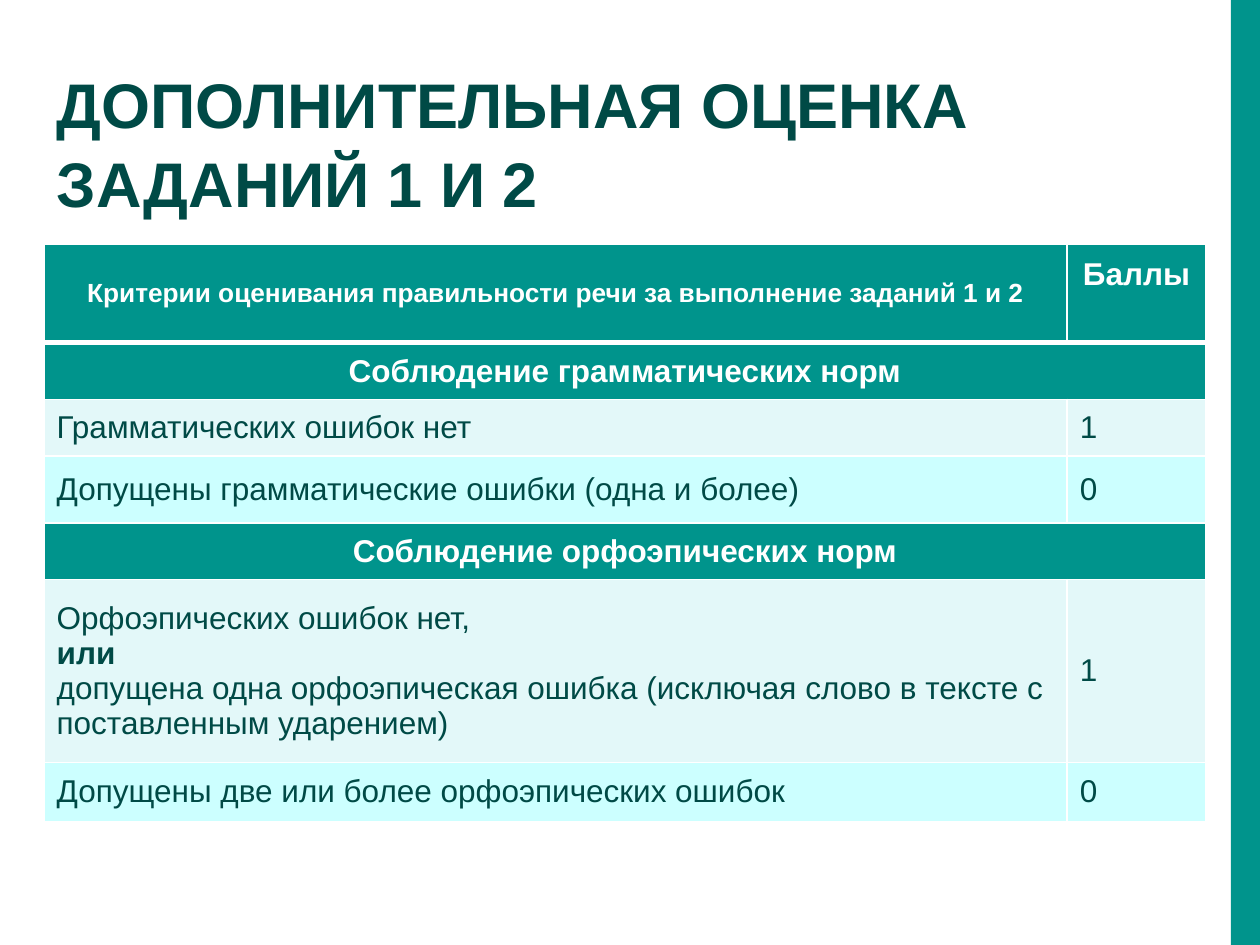
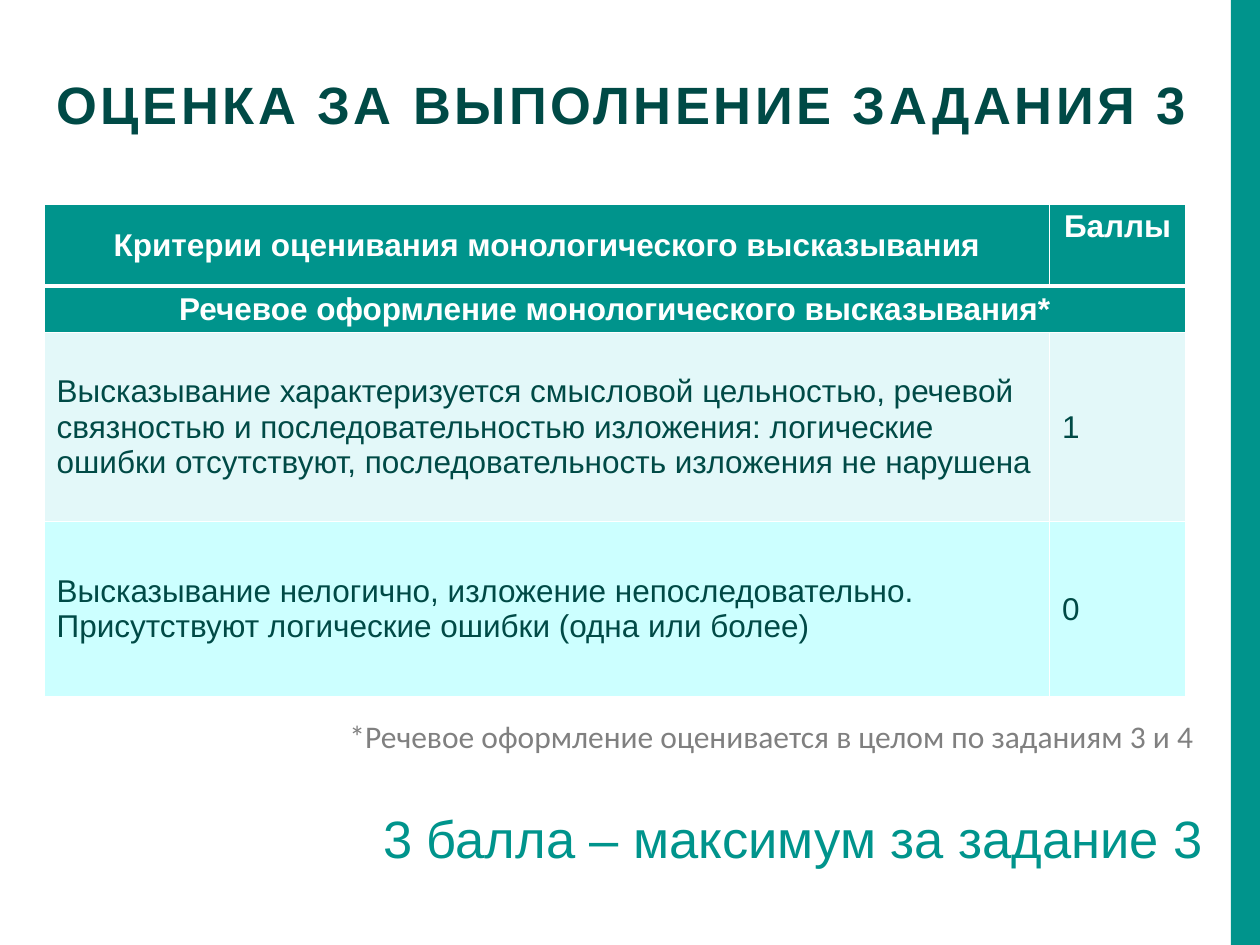
from dataclasses import dataclass

from lxml.etree import SubElement
from pptx import Presentation
from pptx.dml.color import RGBColor
from pptx.enum.shapes import MSO_SHAPE
from pptx.enum.text import MSO_ANCHOR, MSO_AUTO_SIZE, PP_ALIGN
from pptx.oxml import parse_xml
from pptx.oxml.ns import nsdecls, qn
from pptx.slide import Slide, SlideLayout
from pptx.table import Table, _Cell
from pptx.text.text import TextFrame
from pptx.util import Inches, Length, Pt


@dataclass(frozen=True)
class Theme:
    teal: str = "00948C"
    ink: str = "004A46"
    pale: str = "E3F8F9"
    aqua: str = "CCFFFF"
    white: str = "FFFFFF"
    gray: str = "808080"
    sans: str = "Arial"
    note: str = "Calibri"
    body: float = 18
    small: float = 15
    large: float = 30
    huge: float = 36
    line: float = 1
    rule: float = 3


@dataclass(frozen=True)
class Box:
    col: float
    row: float
    wide: float
    high: float

    def place(self) -> tuple[Length, Length, Length, Length]:
        return unit(self.col), unit(self.row), unit(self.wide), unit(self.high)


@dataclass(frozen=True)
class Head:
    text: str
    box: Box
    size: float
    lead: float = 1.0
    gap: float = 0


@dataclass(frozen=True)
class Row:
    text: str
    high: float
    score: str = ""


@dataclass(frozen=True)
class Grid:
    left: float
    top: float
    cols: tuple[float, float]
    rows: tuple[Row, ...]
    size: float = 18


@dataclass(frozen=True)
class Note:
    text: str
    box: Box
    size: float
    color: str
    face: str


@dataclass(frozen=True)
class Page:
    head: Head
    grid: Grid
    notes: tuple[Note, ...] = ()


THEME = Theme()
COLS, ROWS = 100, 75
EDGE = 3.5
PAD = 0.4
STRIP = Box(97.7, 0, 2.3, ROWS)
LABEL = "Баллы"
STRONG = "или"

PAGES = (
    Page(
        Head("ДОПОЛНИТЕЛЬНАЯ ОЦЕНКА ЗАДАНИЙ 1 И 2",
             Box(EDGE, 4.4, 88.2, 13.1), THEME.huge, lead=1.05),
        Grid(EDGE, 19.4, (81.2, 11), (
            Row("Критерии оценивания правильности речи за выполнение заданий 1 и 2",
                7.8, LABEL),
            Row("Соблюдение грамматических норм", 4.5),
            Row("Грамматических ошибок нет", 4.5, "1"),
            Row("Допущены грамматические ошибки (одна и более)", 5.3, "0"),
            Row("Соблюдение орфоэпических норм", 4.5),
            Row("Орфоэпических ошибок нет,\nили\nдопущена одна орфоэпическая ошибка "
                "(исключая слово в тексте с поставленным ударением)", 14.5, "1"),
            Row("Допущены две или более орфоэпических ошибок", 4.7, "0"),
        ), THEME.small),
    ),
    Page(
        Head("ОЦЕНКА ЗА ВЫПОЛНЕНИЕ ЗАДАНИЯ 3",
             Box(EDGE, 5.2, 93.7, 7.1), THEME.large, gap=2),
        Grid(EDGE, 16.2, (79.8, 10.8), (
            Row("Критерии оценивания монологического высказывания", 6.5, LABEL),
            Row("Речевое оформление монологического высказывания*", 3.7),
            Row("Высказывание характеризуется смысловой цельностью, речевой связностью "
                "и последовательностью изложения: логические ошибки отсутствуют, "
                "последовательность изложения не нарушена", 15, "1"),
            Row("Высказывание нелогично, изложение непоследовательно. "
                "Присутствуют логические ошибки (одна или более)", 13.9, "0"),
        )),
        (
            Note("3 балла – максимум за задание 3", Box(8.3, 63.5, 88.2, 6.1),
                 THEME.large, THEME.teal, THEME.sans),
            Note("*Речевое оформление оценивается в целом по заданиям 3 и 4",
                 Box(13.8, 56.4, 81.9, 4), THEME.body, THEME.gray, THEME.note),
        ),
    ),
)


def unit(count: float) -> Length:
    return Inches(count * 10 / COLS)


def write(frame: TextFrame, text: str, size: float, color: str,
          align: PP_ALIGN = PP_ALIGN.LEFT, bold: bool = False,
          face: str = THEME.sans, lead: float = 1.0) -> None:
    frame.text = text
    for para in frame.paragraphs:
        para.alignment = align
        para.line_spacing = lead
        para.space_before = Pt(0)
        for run in para.runs:
            looks = {"name": face, "size": Pt(size), "bold": bold or run.text == STRONG}
            for key, value in looks.items():
                setattr(run.font, key, value)
            run.font.color.rgb = RGBColor.from_string(color)


def title(slide: Slide, head: Head) -> None:
    shape = slide.shapes.title
    for key, value in zip(("left", "top", "width", "height"), head.box.place()):
        setattr(shape, key, value)
    frame = shape.text_frame
    looks = {"word_wrap": True, "auto_size": MSO_AUTO_SIZE.NONE,
             "vertical_anchor": MSO_ANCHOR.TOP}
    for key, value in looks.items():
        setattr(frame, key, value)
    write(frame, head.text, head.size, THEME.ink, bold=True, lead=head.lead)
    if head.gap:
        font = frame.paragraphs[0].runs[0].font
        font._element.set("spc", str(int(head.gap * 100)))


def border(cell: _Cell, upper: float, lower: float) -> None:
    props = cell._tc.get_or_add_tcPr()
    sides = {"lnL": THEME.line, "lnR": THEME.line, "lnT": upper, "lnB": lower}
    for spot, (side, width) in enumerate(sides.items()):
        line = parse_xml(f'<a:{side} {nsdecls("a")} w="{Pt(width)}"/>')
        fill = SubElement(line, qn("a:solidFill"))
        SubElement(fill, qn("a:srgbClr")).set("val", THEME.white)
        props.insert(spot, line)


def paint(cell: _Cell, fill: str) -> None:
    cell.fill.solid()
    cell.fill.fore_color.rgb = RGBColor.from_string(fill)
    looks = {"vertical_anchor": MSO_ANCHOR.MIDDLE, "margin_left": unit(1),
             "margin_right": unit(1), "margin_top": unit(PAD), "margin_bottom": unit(PAD)}
    for key, value in looks.items():
        setattr(cell, key, value)


def fill_row(table: Table, spot: int, row: Row, size: float) -> None:
    table.rows[spot].height = unit(row.high)
    main, mark = table.cell(spot, 0), table.cell(spot, 1)
    dark = row.score not in ("0", "1")
    tint = THEME.teal if dark else THEME.pale if row.score == "1" else THEME.aqua
    ink = THEME.white if dark else THEME.ink
    align = PP_ALIGN.CENTER if dark else PP_ALIGN.LEFT
    for cell in (main, mark):
        paint(cell, tint)
        border(cell, THEME.rule if spot == 1 else THEME.line,
               THEME.rule if spot == 0 else THEME.line)
    write(main.text_frame, row.text, size if spot == 0 else THEME.body, ink, align, dark)
    if not row.score:
        main.merge(mark)
        return
    write(mark.text_frame, row.score, THEME.body, ink, align, dark)
    if spot == 0:
        mark.vertical_anchor = MSO_ANCHOR.TOP
        pair = 2 * 1.15 * THEME.body / 72 * 10
        mark.margin_top = unit((row.high - pair) / 2)


def draw_grid(slide: Slide, grid: Grid) -> None:
    box = Box(grid.left, grid.top, sum(grid.cols), sum(row.high for row in grid.rows))
    table = slide.shapes.add_table(len(grid.rows), 2, *box.place()).table
    for col, wide in zip(table.columns, grid.cols):
        col.width = unit(wide)
    for spot, row in enumerate(grid.rows):
        fill_row(table, spot, row, grid.size)


def draw_note(slide: Slide, note: Note) -> None:
    frame = slide.shapes.add_textbox(*note.box.place()).text_frame
    frame.word_wrap = True
    write(frame, note.text, note.size, note.color, PP_ALIGN.RIGHT, face=note.face)


def add_strip(slide: Slide, layout: SlideLayout) -> None:
    strip = slide.shapes.add_shape(MSO_SHAPE.RECTANGLE, *STRIP.place())
    strip.shadow.inherit = False
    strip.fill.solid()
    strip.fill.fore_color.rgb = RGBColor.from_string(THEME.teal)
    strip.line.fill.background()
    strip.element.nvSpPr.cNvPr.set("id", "20")
    layout.shapes.element.append(strip.element)


def main() -> None:
    """Build the two scoring slides and save them."""
    deck = Presentation()
    deck.slide_width, deck.slide_height = unit(COLS), unit(ROWS)
    layout = deck.slide_layouts[5]
    for spot, page in enumerate(PAGES):
        slide = deck.slides.add_slide(layout)
        if spot == 0:
            add_strip(slide, layout)
        title(slide, page.head)
        draw_grid(slide, page.grid)
        for note in page.notes:
            draw_note(slide, note)
    deck.save("out.pptx")


if __name__ == "__main__":
    main()
